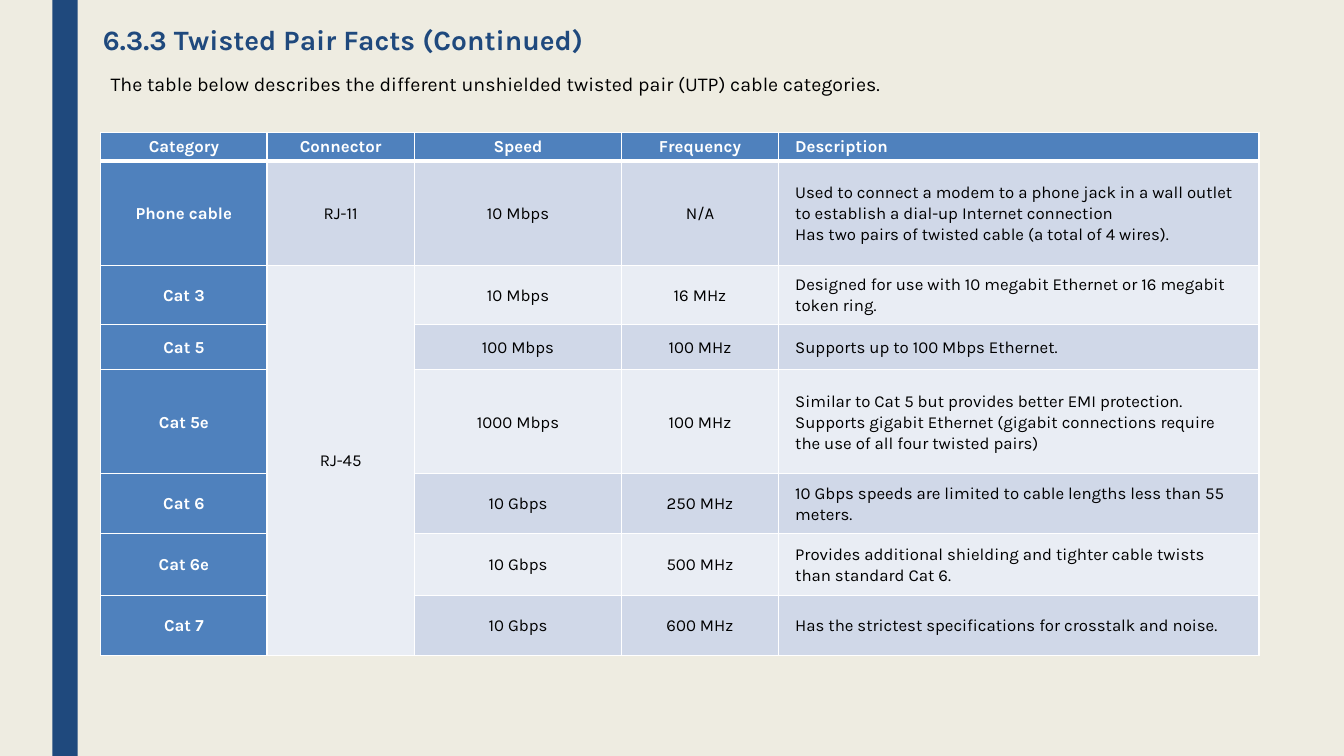
"""Build the slide that compares unshielded twisted pair cable categories."""
from copy import deepcopy

from lxml.etree import SubElement
from pptx import Presentation
from pptx.dml.color import RGBColor
from pptx.enum.shapes import MSO_SHAPE
from pptx.enum.text import MSO_ANCHOR, MSO_AUTO_SIZE, PP_ALIGN
from pptx.oxml.ns import qn
from pptx.util import Cm, Pt

FONT = "Karla"
NAVY, BLUE, WHITE, BLACK = "1F497D", "4F81BD", "FFFFFF", "000000"
BANDS = ["E9EDF4", "D0D8E8"]
COLUMN_WIDTHS = [4.19, 3.71, 5.23, 3.94, 12.12]
ROW_HEIGHTS = [0.58, 2.62, 1.5, 1.14, 2.62, 1.5, 1.57, 1.5]
ROWS = [
    ["Category", "Connector", "Speed", "Frequency", "Description"],
    ["Phone cable", "RJ-11", "10 Mbps", "N/A",
     "Used to connect a modem to a phone jack in a wall outlet to establish a dial-up Internet connection\n"
     "Has two pairs of twisted cable (a total of 4 wires)."],
    ["Cat 3", "RJ-45", "10 Mbps", "16 MHz",
     "Designed for use with 10 megabit Ethernet or 16 megabit token ring."],
    ["Cat 5", "", "100 Mbps", "100 MHz", "Supports up to 100 Mbps Ethernet."],
    ["Cat 5e", "", "1000 Mbps", "100 MHz",
     "Similar to Cat 5 but provides better EMI protection. Supports gigabit Ethernet "
     "(gigabit connections require the use of all four twisted pairs)"],
    ["Cat 6", "", "10 Gbps", "250 MHz",
     "10 Gbps speeds are limited to cable lengths less than 55 meters."],
    ["Cat 6e", "", "10 Gbps", "500 MHz",
     "Provides additional shielding and tighter cable twists than standard Cat 6."],
    ["Cat 7", "", "10 Gbps", "600 MHz",
     "Has the strictest specifications for crosstalk and noise."],
]


def paint(color_format, color):
    color_format.rgb = RGBColor.from_string(color)


def write(para, text, size, color, bold=False):
    para.text = text
    for span in para.runs:
        span.font.name = FONT
        span.font.size = Pt(size)
        span.font.bold = bold
        paint(span.font.color, color)
    for line_break in para._p.findall(qn("a:br")):
        line_break.append(deepcopy(para.runs[0]._r.rPr))


deck = Presentation()
deck.slide_width, deck.slide_height = Cm(33.87), Cm(19.05)
page = deck.slides.add_slide(deck.slide_layouts.get_by_name("Title Only"))
page.background.fill.solid()
paint(page.background.fill.fore_color, "EEECE1")

bar = page.shapes.add_shape(MSO_SHAPE.RECTANGLE, Cm(1.32), Cm(0), Cm(0.64), deck.slide_height)
bar.shadow.inherit = False
bar.fill.solid()
paint(bar.fill.fore_color, NAVY)
bar.line.fill.background()

title = page.shapes.title
title.left, title.top, title.width, title.height = Cm(2.34), Cm(0.53), Cm(26.67), Cm(4.11)
title.text_frame.vertical_anchor = MSO_ANCHOR.TOP
title.text_frame.auto_size = MSO_AUTO_SIZE.NONE
heading = title.text_frame.paragraphs[0]
heading.alignment = PP_ALIGN.LEFT
heading.line_spacing = 0.89
write(heading, "6.3.3 Twisted Pair Facts (Continued)", 20, NAVY, True)

table = page.shapes.add_table(len(ROWS), len(COLUMN_WIDTHS), Cm(2.54), Cm(3.33),
                              Cm(sum(COLUMN_WIDTHS)), Cm(sum(ROW_HEIGHTS))).table
for column, width in zip(table.columns, COLUMN_WIDTHS):
    column.width = Cm(width)
for row, height in zip(table.rows, ROW_HEIGHTS):
    row.height = Cm(height)
table.cell(2, 1).merge(table.cell(7, 1))

for row_number, texts in enumerate(ROWS):
    for column_number, text in enumerate(texts):
        cell = table.cell(row_number, column_number)
        is_header = row_number == 0
        is_label = is_header or column_number == 0
        is_description = column_number == 4
        cell.vertical_anchor = MSO_ANCHOR.MIDDLE
        cell.margin_left = cell.margin_right = Cm(0.43)
        cell.margin_top = cell.margin_bottom = Cm(0.2 if is_description and not is_header else 0.1)

        borders = {"a:lnL": 1, "a:lnR": 1, "a:lnT": 3 if row_number == 1 else 1,
                   "a:lnB": 3 if is_header else 1}
        for tag, points in borders.items():
            border = SubElement(cell._tc.get_or_add_tcPr(), qn(tag), w=str(Pt(points)))
            SubElement(SubElement(border, qn("a:solidFill")), qn("a:srgbClr"), val=WHITE)
        cell.fill.solid()
        paint(cell.fill.fore_color, BLUE if is_label else BANDS[row_number % 2])

        if text:
            para = cell.text_frame.paragraphs[0]
            para.alignment = PP_ALIGN.LEFT if is_description else PP_ALIGN.CENTER
            para.line_spacing = 1.07
            para.space_before = para.space_after = Pt(3.8)
            write(para, text, 12, WHITE if is_label else BLACK, is_label)

box = page.shapes.add_textbox(Cm(2.54), Cm(1.7), Cm(29.21), Cm(1.63))
box.text_frame.word_wrap = True
write(box.text_frame.paragraphs[0],
      "The table below describes the different unshielded twisted pair (UTP) cable categories.", 14, BLACK)

deck.save("out.pptx")
